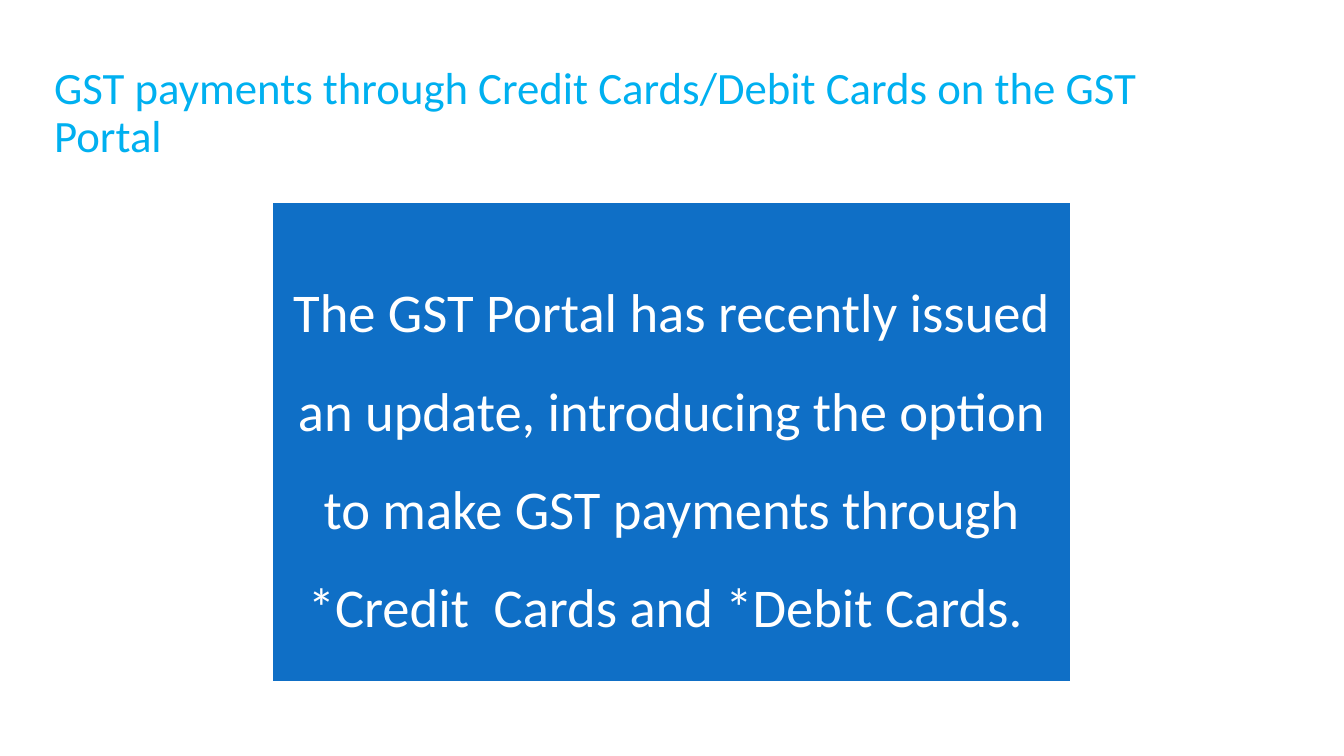
"""Build the slide on GST payments by credit and debit card."""
from pptx import Presentation
from pptx import util as u
from pptx.dml.color import RGBColor
from pptx.enum import shapes, text

PX = 914400 / 100.8
COLOURS = {"title": "00B0F0", "panel": "0F6FC6", "white": "FFFFFF"}
TITLE = "GST payments through Credit Cards/Debit Cards on the GST Portal"
MESSAGE = (
    "The GST Portal has recently issued an update, introducing the option "
    "to make GST payments through *Credit  Cards and *Debit Cards. "
)


def px(length):
    return u.Emu(round(length * PX))


def colour(name):
    return RGBColor.from_string(COLOURS[name])


def write(shape, words, size, colour_name, alignment, line_spacing):
    frame = shape.text_frame
    frame.word_wrap = True
    frame.auto_size = text.MSO_AUTO_SIZE.NONE
    frame.vertical_anchor = text.MSO_ANCHOR.MIDDLE
    paragraph = frame.paragraphs[0]
    paragraph.text = words
    paragraph.alignment = alignment
    paragraph.line_spacing = line_spacing
    paragraph.font.name = "Calibri"
    paragraph.font.size = u.Pt(size)
    paragraph.font.color.rgb = colour(colour_name)


def add_title(slide, left, top, width, height):
    title = slide.shapes.title
    title.left, title.top = px(left), px(top)
    title.width, title.height = px(width), px(height)
    write(title, TITLE, 32, "title", text.PP_ALIGN.LEFT, 0.9)


def add_panel(slide, left, top, width, height, inset):
    panel = slide.shapes.add_shape(
        shapes.MSO_SHAPE.RECTANGLE, px(left), px(top), px(width), px(height)
    )
    panel.shadow.inherit = False
    panel.fill.solid()
    panel.fill.fore_color.rgb = colour("panel")
    panel.line.color.rgb = colour("white")
    panel.line.width = u.Pt(1)
    frame = panel.text_frame
    frame.margin_left = frame.margin_right = px(inset)
    frame.margin_top = frame.margin_bottom = px(inset)
    write(panel, MESSAGE, 39, "white", text.PP_ALIGN.CENTER, 1.5)


def main():
    presentation = Presentation()
    presentation.slide_width = px(1344)
    presentation.slide_height = px(756)
    slide = presentation.slides.add_slide(presentation.slide_layouts[5])
    add_title(slide, 44, 41, 1207, 146)
    add_panel(slide, 272, 202, 799, 480, 16)
    presentation.save("out.pptx")


if __name__ == "__main__":
    main()
